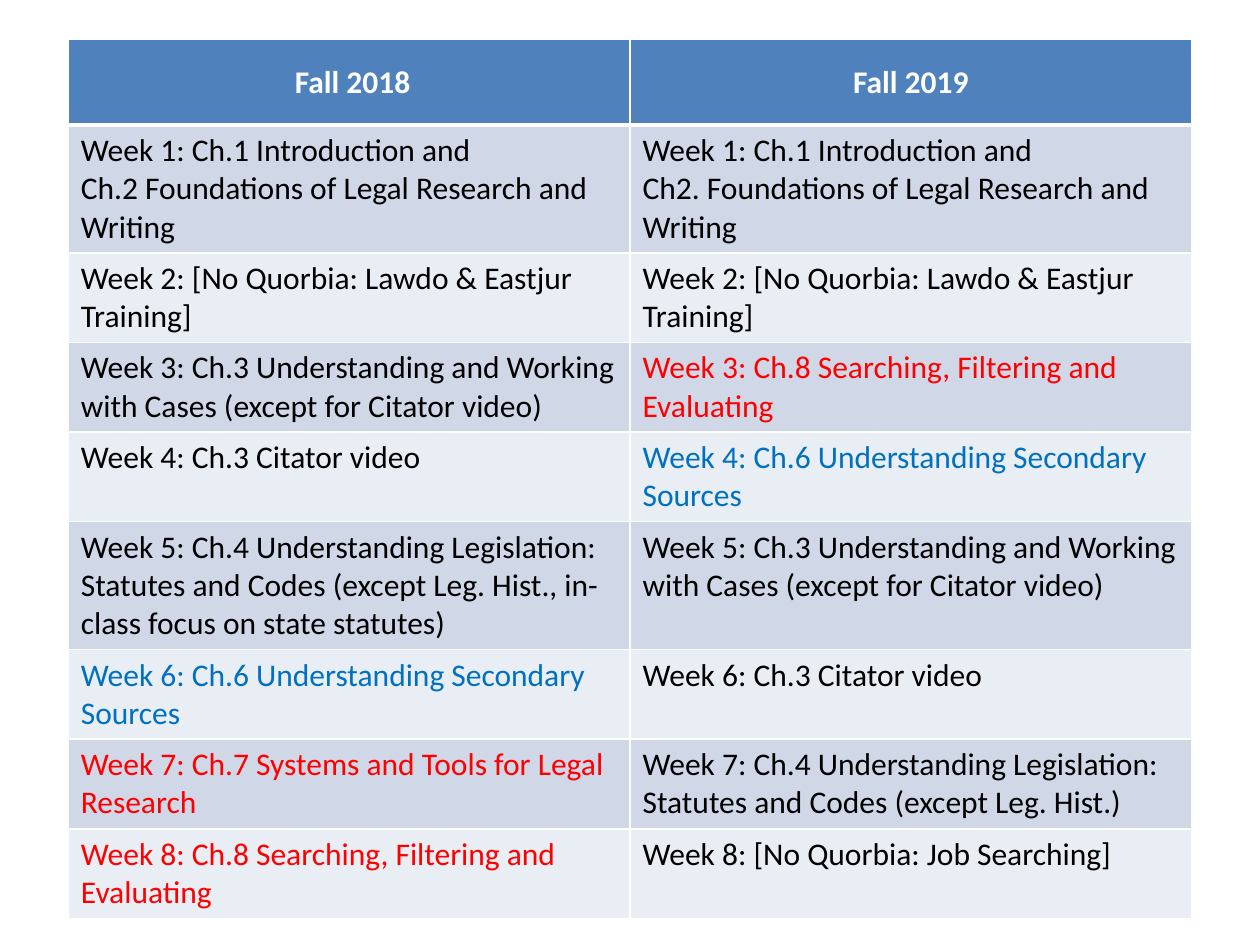
import pptx
import pptx.util
import pptx.dml.color
import pptx.enum.text
import pptx.oxml.ns
from dataclasses import dataclass
from lxml import etree

Pt = pptx.util.Pt


@dataclass(frozen=True)
class Theme:
    font: str = "Calibri"
    size: int = 18
    head: str = "4F81BD"
    bands: tuple = ("D0D8E8", "E9EDF4")
    white: str = "FFFFFF"
    black: str = "000000"
    red: str = "FF0000"
    blue: str = "0070C0"
    thin: int = 1
    thick: int = 3


THEME = Theme()
HEADS = (" Fall 2018", "Fall 2019")

INTRO = "Ch.1 Introduction and \n{} Foundations of Legal Research and Writing"
TRAIN = "[No Quorbia: Lawdo & Eastjur Training]"
CASES = "Ch.3 Understanding and Working with Cases (except for Citator video)"
VIDEO = "Ch.3 Citator video"
LAWS = "Ch.4 Understanding Legislation: Statutes and Codes (except Leg. Hist.{})"
SOURCES = "Ch.6 Understanding Secondary Sources"
TOOLS = "Ch.7 Systems and Tools for Legal Research"
SEARCH = "Ch.8 Searching, Filtering and Evaluating"
JOBS = "[No Quorbia: Job Searching]"

WEEKS = (
    (INTRO.format("Ch.2"), INTRO.format("Ch2.")),
    (TRAIN, TRAIN),
    (CASES, SEARCH),
    (VIDEO, SOURCES),
    (LAWS.format(", in- class focus on state statutes"), CASES),
    (SOURCES, VIDEO),
    (TOOLS, LAWS.format("")),
    (SEARCH, JOBS),
)
MARKS = {SOURCES: THEME.blue, TOOLS: THEME.red, SEARCH: THEME.red}


def rgb(code):
    return pptx.dml.color.RGBColor.from_string(code)


def set_edges(cell, top, base):
    """Draw white lines round a cell; top and base are widths in points."""
    props = cell._tc.get_or_add_tcPr()
    widths = {"lnL": THEME.thin, "lnR": THEME.thin, "lnT": top, "lnB": base}
    for tag, width in widths.items():
        line = etree.SubElement(props, pptx.oxml.ns.qn("a:" + tag), w=str(Pt(width)))
        fill = etree.SubElement(line, pptx.oxml.ns.qn("a:solidFill"))
        etree.SubElement(fill, pptx.oxml.ns.qn("a:srgbClr"), val=THEME.white)


def set_cell(cell, text, fill, ink, bold=False):
    cell.fill.solid()
    cell.fill.fore_color.rgb = rgb(fill)
    para = cell.text_frame.paragraphs[0]
    para.text = text
    for run in para.runs:
        run.font.name = THEME.font
        run.font.size = Pt(THEME.size)
        run.font.bold = bold
        run.font.color.rgb = rgb(ink)


def set_head(cell, text):
    set_edges(cell, THEME.thin, THEME.thick)
    set_cell(cell, text, THEME.head, THEME.white, bold=True)
    cell.vertical_anchor = pptx.enum.text.MSO_ANCHOR.MIDDLE
    cell.text_frame.paragraphs[0].alignment = pptx.enum.text.PP_ALIGN.CENTER


def set_week(cell, week, topic):
    set_edges(cell, THEME.thick if week == 1 else THEME.thin, THEME.thin)
    fill = THEME.bands[(week - 1) % 2]
    ink = MARKS.get(topic, THEME.black)
    set_cell(cell, f"Week {week}: {topic}", fill, ink)


def add_plan(slide):
    """Add the table that sets the two terms side by side."""
    count = len(WEEKS) + 1
    frame = slide.shapes.add_table(
        count, len(HEADS), Pt(39), Pt(22.5), Pt(642), Pt(49 * count))
    table = frame.table
    for col, text in enumerate(HEADS):
        set_head(table.cell(0, col), text)
    for week, topics in enumerate(WEEKS, 1):
        for col, topic in enumerate(topics):
            set_week(table.cell(week, col), week, topic)


def main():
    deck = pptx.Presentation()
    deck.slide_width, deck.slide_height = Pt(720), Pt(540)
    slide = deck.slides.add_slide(deck.slide_layouts[6])
    add_plan(slide)
    deck.save("out.pptx")


if __name__ == "__main__":
    main()
